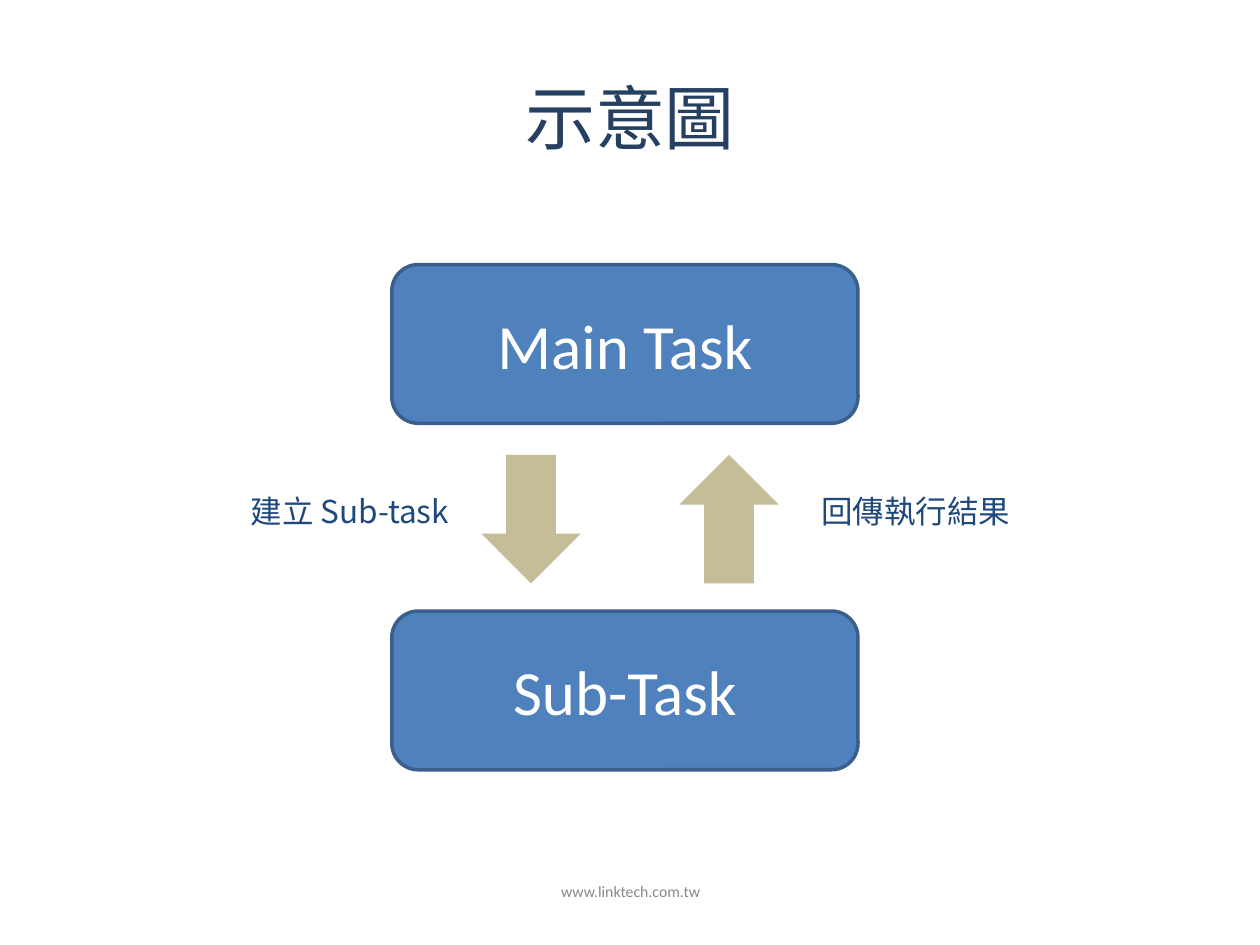
import pptx
import pptx.util
import pptx.dml.color
import pptx.enum.shapes
import pptx.enum.text
import pptx.oxml

EMU_PER_PX = 9144  # 100 px to the inch
SHAPE = pptx.enum.shapes.MSO_SHAPE
ALIGN = pptx.enum.text.PP_ALIGN
ANCHOR = pptx.enum.text.MSO_ANCHOR


def px(length):
    return pptx.util.Emu(length * EMU_PER_PX)


def color(hex_string):
    return pptx.dml.color.RGBColor.from_string(hex_string)


def write(frame, text, font="Calibri", size=18, ink="FFFFFF",
          align=ALIGN.CENTER, anchor=ANCHOR.MIDDLE):
    frame.word_wrap = True
    frame.vertical_anchor = anchor
    paragraph = frame.paragraphs[0]
    paragraph.alignment = align
    run = paragraph.add_run()
    run.text = text
    run.font.name = font
    run.font.size = pptx.util.Pt(size)
    run.font.color.rgb = color(ink)
    # East Asian characters take their own typeface element
    east_asian = pptx.oxml.parse_xml(
        '<a:ea xmlns:a="http://schemas.openxmlformats.org/drawingml/2006/main"'
        f' typeface="{font}"/>')
    run.font._element.find(
        "{http://schemas.openxmlformats.org/drawingml/2006/main}latin"
    ).addnext(east_asian)


class Diagram:
    task_fill = "4F81BD"
    task_line = "3A5F8C"
    arrow_fill = "C4BD97"
    label_ink = "1F497D"

    def __init__(self, slide):
        self.slide = slide

    def text(self, box, text, **style):
        textbox = self.slide.shapes.add_textbox(*map(px, box))
        write(textbox.text_frame, text, **style)

    def shape(self, kind, box, fill):
        shape = self.slide.shapes.add_shape(kind, *map(px, box))
        shape.shadow.inherit = False
        shape.fill.solid()
        shape.fill.fore_color.rgb = color(fill)
        return shape

    def task(self, top, name):
        task = self.shape(SHAPE.ROUNDED_RECTANGLE, (311, top, 370, 126),
                          self.task_fill)
        task.line.color.rgb = color(self.task_line)
        task.line.width = pptx.util.Pt(2)
        write(task.text_frame, name, size=36)

    def arrow(self, left, rotation):
        arrow = self.shape(SHAPE.DOWN_ARROW, (left, 361, 79, 102),
                           self.arrow_fill)
        arrow.line.fill.background()
        arrow.rotation = rotation

    def label(self, left, text):
        self.text((left, 386, 244, 40), text, font="Noto Sans CJK SC",
                  ink=self.label_ink, align=ALIGN.LEFT, anchor=ANCHOR.TOP)


def main():
    presentation = pptx.Presentation()
    presentation.slide_width = px(1000)
    presentation.slide_height = px(750)
    diagram = Diagram(
        presentation.slides.add_slide(presentation.slide_layouts[6]))

    # Title and footer
    diagram.text((50, 30, 900, 125), "示意圖", font="Noto Sans CJK JP",
                 size=40, ink="254061")
    diagram.text((342, 695, 317, 40), "www.linktech.com.tw", size=9,
                 ink="898989", anchor=ANCHOR.TOP)

    # Tasks
    for top, name in ((210, "Main Task"), (485, "Sub-Task")):
        diagram.task(top, name)

    # Calls between the tasks: down to create, up to return
    for arrow_left, rotation, label_left, label in (
            (382, 0, 189, "建立 Sub-task"),
            (539, 180, 642, "回傳執行結果")):
        diagram.arrow(arrow_left, rotation)
        diagram.label(label_left, label)

    presentation.save("out.pptx")


if __name__ == "__main__":
    main()
